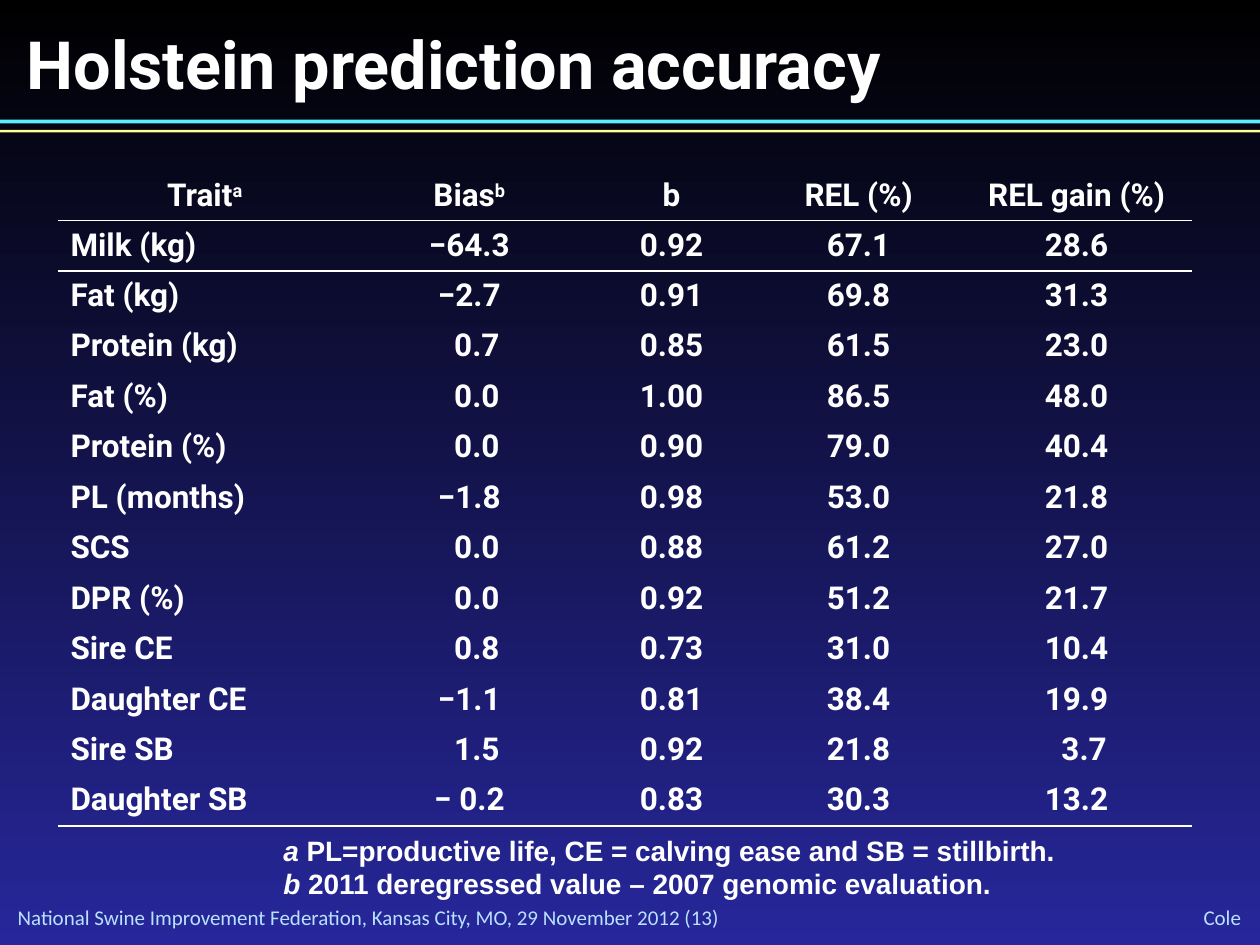
from dataclasses import dataclass

from lxml.etree import SubElement
from pptx import Presentation
from pptx.dml.color import RGBColor
from pptx.enum.shapes import MSO_SHAPE
from pptx.enum.text import MSO_ANCHOR, MSO_AUTO_SIZE, PP_ALIGN
from pptx.oxml.ns import qn
from pptx.util import Inches, Pt

COLORS = {
    "top": "000000",
    "bottom": "27279B",
    "text": "FFFFFF",
    "footer": "B8E2FF",
    "cyan": "5BEFFF",
    "yellow": "FFFF99",
}
SLIDE_WIDTH, SLIDE_HEIGHT = Inches(10), Inches(7.5)
NO_STYLE = "{2D5ABB26-0587-4C30-8999-92F81FD0307C}"
COLUMN_SHARES = (23.3, 18.7, 13.4, 16.3, 18.3)
ROW_SHARE = 4.8
DECIMAL_COLUMNS = (1, 4)
SHORT_VALUE_INDENT = Inches(0.12)
HEADERS = (("Trait", "a"), ("Bias", "b"), ("b", ""), ("REL (%)", ""), ("REL gain (%)", ""))
TRAITS = (
    ("Milk (kg)", "−64.3", "0.92", "67.1", "28.6"),
    ("Fat (kg)", "−2.7", "0.91", "69.8", "31.3"),
    ("Protein (kg)", "0.7", "0.85", "61.5", "23.0"),
    ("Fat (%)", "0.0", "1.00", "86.5", "48.0"),
    ("Protein (%)", "0.0", "0.90", "79.0", "40.4"),
    ("PL (months)", "−1.8", "0.98", "53.0", "21.8"),
    ("SCS", "0.0", "0.88", "61.2", "27.0"),
    ("DPR (%)", "0.0", "0.92", "51.2", "21.7"),
    ("Sire CE", "0.8", "0.73", "31.0", "10.4"),
    ("Daughter CE", "−1.1", "0.81", "38.4", "19.9"),
    ("Sire SB", "1.5", "0.92", "21.8", "3.7"),
    ("Daughter SB", "− 0.2", "0.83", "30.3", "13.2"),
)
FOOTNOTES = (
    ("a ", "PL=productive life, CE = calving ease and SB = stillbirth."),
    ("b ", "2011 deregressed value – 2007 genomic evaluation."),
)


@dataclass(frozen=True)
class Box:
    """A rectangle in percent of the slide's width and height."""
    left: float
    top: float
    width: float
    height: float

    def lengths(self) -> tuple:
        return (across(self.left), down(self.top), across(self.width), down(self.height))


@dataclass(frozen=True)
class Font:
    name: str
    size: float
    color: str = "text"
    bold: bool = True


@dataclass(frozen=True)
class Footer:
    text: str
    box: Box
    alignment: PP_ALIGN


TITLE_FONT = Font("Roboto", 38)
TABLE_FONT = Font("Roboto", 18)
NOTE_FONT = Font("Arial", 16)
FOOTER_FONT = Font("Calibri", 12, "footer", False)
TITLE_BOX = Box(2.1, 2.4, 90, 8)
TABLE_BOX = Box(4.6, 18, sum(COLUMN_SHARES), ROW_SHARE * (len(TRAITS) + 1))
NOTE_BOX = Box(21.5, 87.47, 63.5, 8.53)
RULES = (("cyan", Box(0, 12.67, 100, 0.4)), ("yellow", Box(0, 13.73, 100, 0.27)))
FOOTERS = (
    Footer("National Swine Improvement Federation, Kansas City, MO, 29 November 2012 (13)",
           Box(1.4, 95.73, 87.2, 2.67), PP_ALIGN.LEFT),
    Footer("Cole", Box(87.2, 95.6, 11.3, 2.8), PP_ALIGN.RIGHT),
)


def across(percent: float) -> int:
    return round(SLIDE_WIDTH * percent / 100)


def down(percent: float) -> int:
    return round(SLIDE_HEIGHT * percent / 100)


def color(name: str) -> RGBColor:
    return RGBColor.from_string(COLORS[name])


def add_run(paragraph, text: str, font: Font, italic: bool = False, raised: bool = False) -> None:
    run = paragraph.add_run()
    run.text = text
    run.font.name = font.name
    run.font.size = Pt(font.size)
    run.font.bold = font.bold
    run.font.italic = italic
    run.font.color.rgb = color(font.color)
    if raised:
        run.font._element.set("baseline", "30000")


def remove_margins(frame) -> None:
    frame.margin_left = frame.margin_right = frame.margin_top = frame.margin_bottom = 0


def paint_background(slide) -> None:
    fill = slide.background.fill
    fill.gradient()
    fill.gradient_angle = 270
    for stop, name in zip(fill.gradient_stops, ("top", "bottom")):
        stop.color.rgb = color(name)


def fill_title(slide) -> None:
    title = slide.shapes.title
    title.left, title.top, title.width, title.height = TITLE_BOX.lengths()
    frame = title.text_frame
    remove_margins(frame)
    frame.vertical_anchor = MSO_ANCHOR.TOP
    frame.auto_size = MSO_AUTO_SIZE.SHAPE_TO_FIT_TEXT
    paragraph = frame.paragraphs[0]
    paragraph.alignment = PP_ALIGN.LEFT
    paragraph.line_spacing = 1.0
    paragraph.space_before = Pt(0)
    add_run(paragraph, "Holstein prediction accuracy", TITLE_FONT)


def add_rule(slide, name: str, box: Box) -> None:
    rule = slide.shapes.add_shape(MSO_SHAPE.RECTANGLE, *box.lengths())
    rule.shadow.inherit = False
    rule.fill.solid()
    rule.fill.fore_color.rgb = color(name)
    rule.line.fill.background()


def add_footer(slide, footer: Footer) -> None:
    frame = slide.shapes.add_textbox(*footer.box.lengths()).text_frame
    remove_margins(frame)
    frame.word_wrap = True
    frame.vertical_anchor = MSO_ANCHOR.MIDDLE
    paragraph = frame.paragraphs[0]
    paragraph.alignment = footer.alignment
    add_run(paragraph, footer.text, FOOTER_FONT)


def add_border(cell, side: str) -> None:
    """Draw a thin line on the side named by lnT (top) or lnB (bottom)."""
    properties = cell._tc.get_or_add_tcPr()
    line = SubElement(properties, qn(f"a:{side}"), w=str(Pt(1)))
    fill = SubElement(line, qn("a:solidFill"))
    SubElement(fill, qn("a:srgbClr"), val=COLORS["text"])


def add_accuracy_table(slide) -> None:
    row_count = len(TRAITS) + 1
    table = slide.shapes.add_table(row_count, len(HEADERS), *TABLE_BOX.lengths()).table
    table.first_row = table.horz_banding = False
    table._tbl.tblPr.find(qn("a:tableStyleId")).text = NO_STYLE
    for column, share in zip(table.columns, COLUMN_SHARES):
        column.width = across(share)
    for row in table.rows:
        row.height = down(ROW_SHARE)
    for column, (text, mark) in enumerate(HEADERS):
        cell = table.cell(0, column)
        cell.vertical_anchor = MSO_ANCHOR.BOTTOM
        paragraph = cell.text_frame.paragraphs[0]
        paragraph.alignment = PP_ALIGN.CENTER
        add_run(paragraph, text, TABLE_FONT)
        if mark:
            add_run(paragraph, mark, TABLE_FONT, raised=True)
        add_border(cell, "lnB")
        cell.fill.background()
    for row, values in enumerate(TRAITS, start=1):
        for column, text in enumerate(values):
            cell = table.cell(row, column)
            paragraph = cell.text_frame.paragraphs[0]
            paragraph.alignment = PP_ALIGN.CENTER if column else PP_ALIGN.LEFT
            if column in DECIMAL_COLUMNS and len(text) < 4:
                paragraph._p.get_or_add_pPr().set("marL", str(SHORT_VALUE_INDENT))
            add_run(paragraph, text, TABLE_FONT)
            if row == 1:
                add_border(cell, "lnT")
            if row == len(TRAITS):
                add_border(cell, "lnB")
            cell.fill.background()


def add_footnotes(slide) -> None:
    frame = slide.shapes.add_textbox(*NOTE_BOX.lengths()).text_frame
    frame.word_wrap = False
    frame.vertical_anchor = MSO_ANCHOR.MIDDLE
    for index, (mark, text) in enumerate(FOOTNOTES):
        paragraph = frame.add_paragraph() if index else frame.paragraphs[0]
        add_run(paragraph, mark, NOTE_FONT, italic=True)
        add_run(paragraph, text, NOTE_FONT)


def main() -> None:
    presentation = Presentation()
    presentation.slide_width, presentation.slide_height = SLIDE_WIDTH, SLIDE_HEIGHT
    slide = presentation.slides.add_slide(presentation.slide_layouts[5])
    paint_background(slide)
    for footer in FOOTERS:
        add_footer(slide, footer)
    for name, box in RULES:
        add_rule(slide, name, box)
    fill_title(slide)
    add_accuracy_table(slide)
    add_footnotes(slide)
    presentation.save("out.pptx")


if __name__ == "__main__":
    main()
